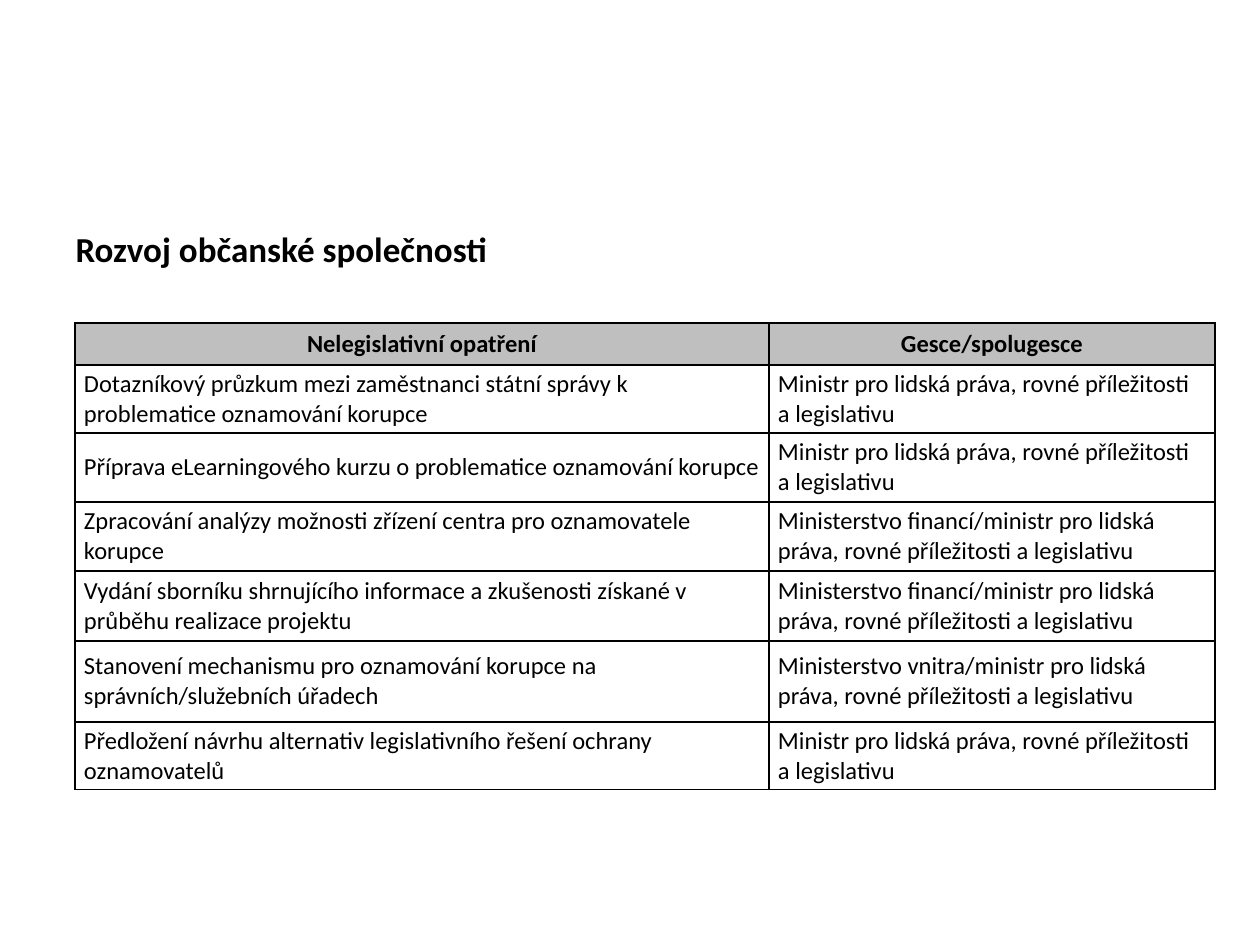
from lxml import etree
from pptx import Presentation
from pptx import util as u
from pptx.dml import color
from pptx.enum import text
from pptx.oxml import ns

PX_PER_INCH = 126
COLORS = {"ink": "000000", "header": "BFBFBF"}
COLUMN_WIDTHS = [694, 446]
ROW_HEIGHTS = [42, 68, 69, 69, 70, 81, 68]
MINISTER = "Ministr pro lidská práva, rovné příležitosti a legislativu"
FINANCE = "Ministerstvo financí/ministr pro lidská práva, rovné příležitosti a legislativu"
ROWS = [
    ("Nelegislativní opatření", "Gesce/spolugesce"),
    ("Dotazníkový průzkum mezi zaměstnanci státní správy k problematice oznamování korupce", MINISTER),
    ("Příprava eLearningového kurzu o problematice oznamování korupce", MINISTER),
    ("Zpracování analýzy možnosti zřízení centra pro oznamovatele korupce", FINANCE),
    ("Vydání sborníku shrnujícího informace a zkušenosti získané v průběhu realizace projektu", FINANCE),
    ("Stanovení mechanismu pro oznamování korupce na správních/služebních úřadech",
     "Ministerstvo vnitra/ministr pro lidská práva, rovné příležitosti a legislativu"),
    ("Předložení návrhu alternativ legislativního řešení ochrany oznamovatelů", MINISTER),
]


def px(length):
    return u.Inches(length / PX_PER_INCH)


def format_text(para, size, bold, align):
    para.alignment = align
    for span in para.runs:
        span.font.name = "Calibri"
        span.font.size = u.Pt(size)
        span.font.bold = bold
        span.font.color.rgb = color.RGBColor.from_string(COLORS["ink"])


deck = Presentation()
deck.slide_width, deck.slide_height = px(1260), px(945)
page = deck.slides.add_slide(deck.slide_layouts[5])

title = page.shapes.title
title.left, title.top, title.width, title.height = px(63), px(221), px(1134), px(624)
title.text_frame.text = "Rozvoj občanské společnosti"
title.text_frame.word_wrap = True
title.text_frame.auto_size = text.MSO_AUTO_SIZE.NONE
title.text_frame.vertical_anchor = text.MSO_ANCHOR.TOP
format_text(title.text_frame.paragraphs[0], 20, True, text.PP_ALIGN.LEFT)

table = page.shapes.add_table(
    len(ROWS), len(COLUMN_WIDTHS), px(75), px(323),
    px(sum(COLUMN_WIDTHS)), px(sum(ROW_HEIGHTS)),
).table
table.horz_banding = False
for column, width in zip(table.columns, COLUMN_WIDTHS):
    column.width = px(width)

for row_index, (labels, height) in enumerate(zip(ROWS, ROW_HEIGHTS)):
    table.rows[row_index].height = px(height)
    is_header = row_index == 0
    for column_index, label in enumerate(labels):
        cell = table.cell(row_index, column_index)
        cell.text_frame.text = label
        cell.vertical_anchor = text.MSO_ANCHOR.MIDDLE
        cell.margin_left = cell.margin_right = px(9)
        cell.margin_top = cell.margin_bottom = 0
        align = text.PP_ALIGN.CENTER if is_header else text.PP_ALIGN.LEFT
        format_text(cell.text_frame.paragraphs[0], 14, is_header, align)

        properties = cell._tc.get_or_add_tcPr()
        for side in ("a:lnL", "a:lnR", "a:lnT", "a:lnB"):
            border = etree.SubElement(properties, ns.qn(side), w=str(u.Pt(1)))
            fill = etree.SubElement(border, ns.qn("a:solidFill"))
            etree.SubElement(fill, ns.qn("a:srgbClr"), val=COLORS["ink"])
        if is_header:
            cell.fill.solid()
            cell.fill.fore_color.rgb = color.RGBColor.from_string(COLORS["header"])
        else:
            cell.fill.background()

deck.save("out.pptx")
